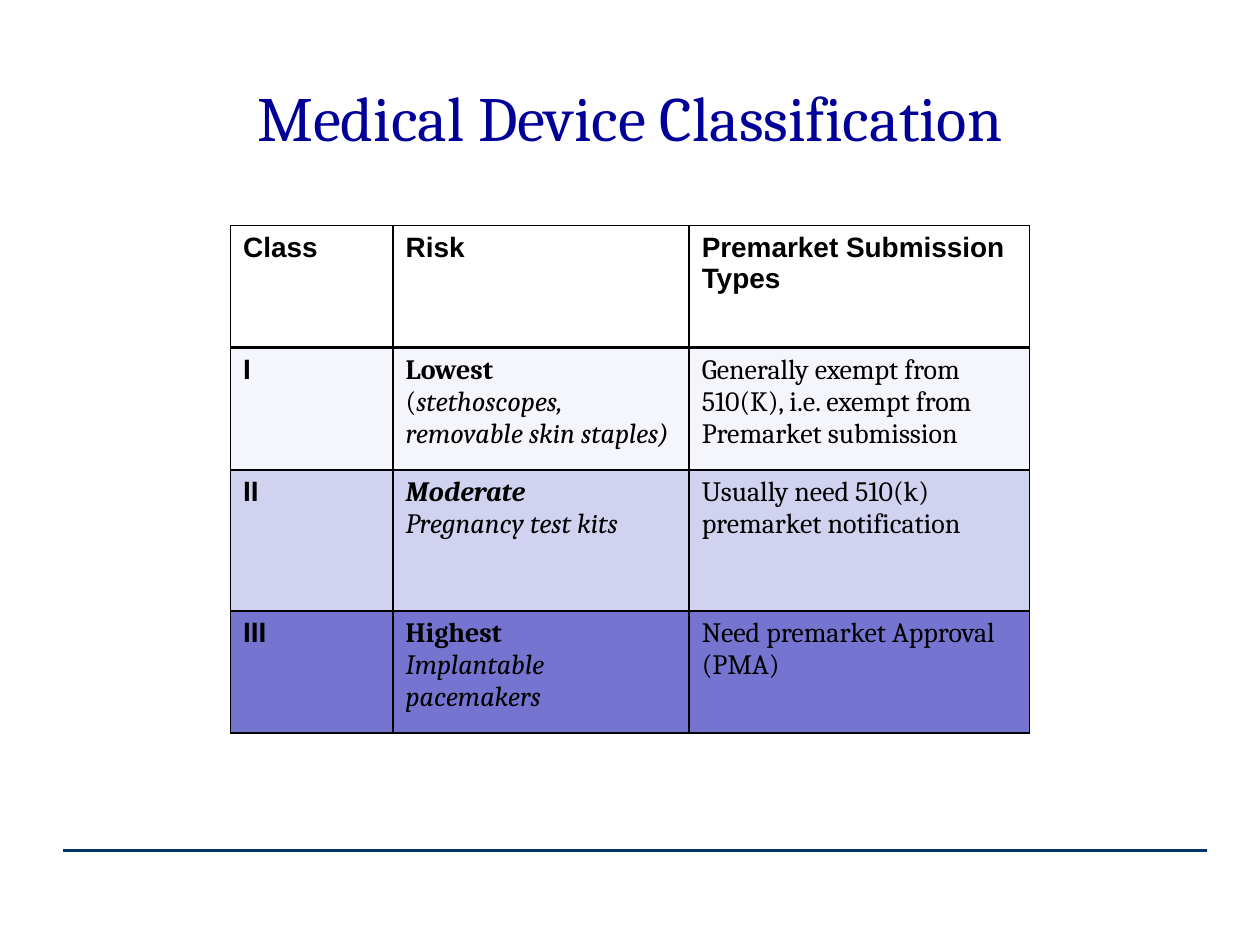
"""Build the medical device classification slide."""
from dataclasses import dataclass
from typing import Optional

from lxml.etree import SubElement
from pptx import Presentation
from pptx.dml.color import RGBColor
from pptx.enum.shapes import MSO_CONNECTOR as Connector
from pptx.enum.text import MSO_ANCHOR as Anchor, PP_ALIGN as Align
from pptx.oxml.ns import qn
from pptx.util import Inches, Pt

BLACK = RGBColor(0x00, 0x00, 0x00)
TITLE_BLUE = RGBColor(0x00, 0x00, 0x99)
RULE_BLUE = RGBColor(0x00, 0x30, 0x67)
LAVENDER = RGBColor(0xD1, 0xD1, 0xF0)
VIOLET = RGBColor(0x75, 0x75, 0xD1)
SANS, SERIF = "Arial", "Cambria"


@dataclass(frozen=True)
class Span:
    text: str
    font: str = SERIF
    bold: bool = False
    italic: bool = False


@dataclass(frozen=True)
class ClassRow:
    cells: tuple[tuple[tuple[Span, ...], ...], ...]
    height: float = 0.97
    fill: Optional[RGBColor] = None
    opacity: int = 100
    top: float = 1
    bottom: float = 1


def heading(text: str) -> tuple[tuple[Span, ...], ...]:
    return ((Span(text, SANS, bold=True),),)


def device_class(name: str, risk: Span, examples: tuple[Span, ...],
                 submission: str, **style) -> ClassRow:
    return ClassRow((heading(name), ((risk,), examples), ((Span(submission),),)), **style)


ROWS = (
    ClassRow(tuple(map(heading, ("Class", "Risk", "Premarket Submission Types"))), bottom=2),
    device_class("I", Span("Lowest", bold=True),
                 (Span("("), Span("stethoscopes, removable skin staples)", italic=True)),
                 "Generally exempt from 510(K), i.e. exempt from Premarket submission",
                 fill=LAVENDER, opacity=20, top=2),
    device_class("II", Span("Moderate", bold=True, italic=True),
                 (Span("Pregnancy test kits", italic=True),),
                 "Usually need 510(k) premarket notification", height=1.12, fill=LAVENDER),
    device_class("III", Span("Highest", bold=True),
                 (Span("Implantable pacemakers", italic=True),),
                 "Need premarket Approval (PMA)", fill=VIOLET),
)
COLUMN_WIDTHS = (1.29, 2.35, 2.7)


def write(paragraph, text: str, *, font: str = SERIF, size: float = 16,
          color: RGBColor = BLACK, bold: bool = False, italic: bool = False) -> None:
    run = paragraph.add_run()
    run.text = text
    run.font.name, run.font.size = font, Pt(size)
    run.font.bold, run.font.italic = bold, italic
    run.font.color.rgb = color


def draw_borders(cell, top: float, bottom: float) -> None:
    properties = cell._tc.get_or_add_tcPr()
    for side, width in (("L", 1), ("R", 1), ("T", top), ("B", bottom)):
        border = SubElement(properties, qn(f"a:ln{side}"), w=str(Pt(width)))
        SubElement(SubElement(border, qn("a:solidFill")), qn("a:srgbClr"), val=str(BLACK))


def fill_cell(cell, color: Optional[RGBColor], opacity: int) -> None:
    if color is None:
        cell.fill.background()
        return
    cell.fill.solid()
    cell.fill.fore_color.rgb = color
    if opacity < 100:
        tint = cell._tc.tcPr.find(qn("a:solidFill")).find(qn("a:srgbClr"))
        SubElement(tint, qn("a:alpha"), val=str(opacity * 1000))


def draw_title(slide) -> None:
    title = slide.shapes.add_textbox(Inches(0.5), Inches(0.3), Inches(9), Inches(1.25))
    frame = title.text_frame
    frame.word_wrap = True
    frame.vertical_anchor = Anchor.MIDDLE
    frame.paragraphs[0].alignment = Align.CENTER
    write(frame.paragraphs[0], "Medical Device Classification", size=36, color=TITLE_BLUE)


def draw_footer_rule(slide) -> None:
    rule = slide.shapes.add_connector(
        Connector.STRAIGHT, Inches(0.5), Inches(6.75), Inches(9.58), Inches(6.75))
    rule.line.color.rgb = RULE_BLUE
    rule.line.width = Pt(2.25)
    SubElement(rule._element.spPr, qn("a:effectLst"))


def draw_classes(slide) -> None:
    classes = slide.shapes.add_table(
        len(ROWS), len(COLUMN_WIDTHS), Inches(1.83), Inches(1.79),
        Inches(sum(COLUMN_WIDTHS)), Inches(sum(row.height for row in ROWS))).table
    classes.first_row = classes.horz_banding = False
    for column, width in zip(classes.columns, COLUMN_WIDTHS):
        column.width = Inches(width)
    for table_row, row in zip(classes.rows, ROWS):
        table_row.height = Inches(row.height)
        for cell, lines in zip(table_row.cells, row.cells):
            draw_borders(cell, row.top, row.bottom)
            fill_cell(cell, row.fill, row.opacity)
            for index, spans in enumerate(lines):
                frame = cell.text_frame
                paragraph = frame.add_paragraph() if index else frame.paragraphs[0]
                for span in spans:
                    write(paragraph, span.text, font=span.font,
                          bold=span.bold, italic=span.italic)


def main() -> None:
    deck = Presentation()
    deck.slide_width, deck.slide_height = Inches(10), Inches(7.5)
    slide = deck.slides.add_slide(deck.slide_layouts[6])
    draw_footer_rule(slide)
    draw_title(slide)
    draw_classes(slide)
    deck.save("out.pptx")


if __name__ == "__main__":
    main()
